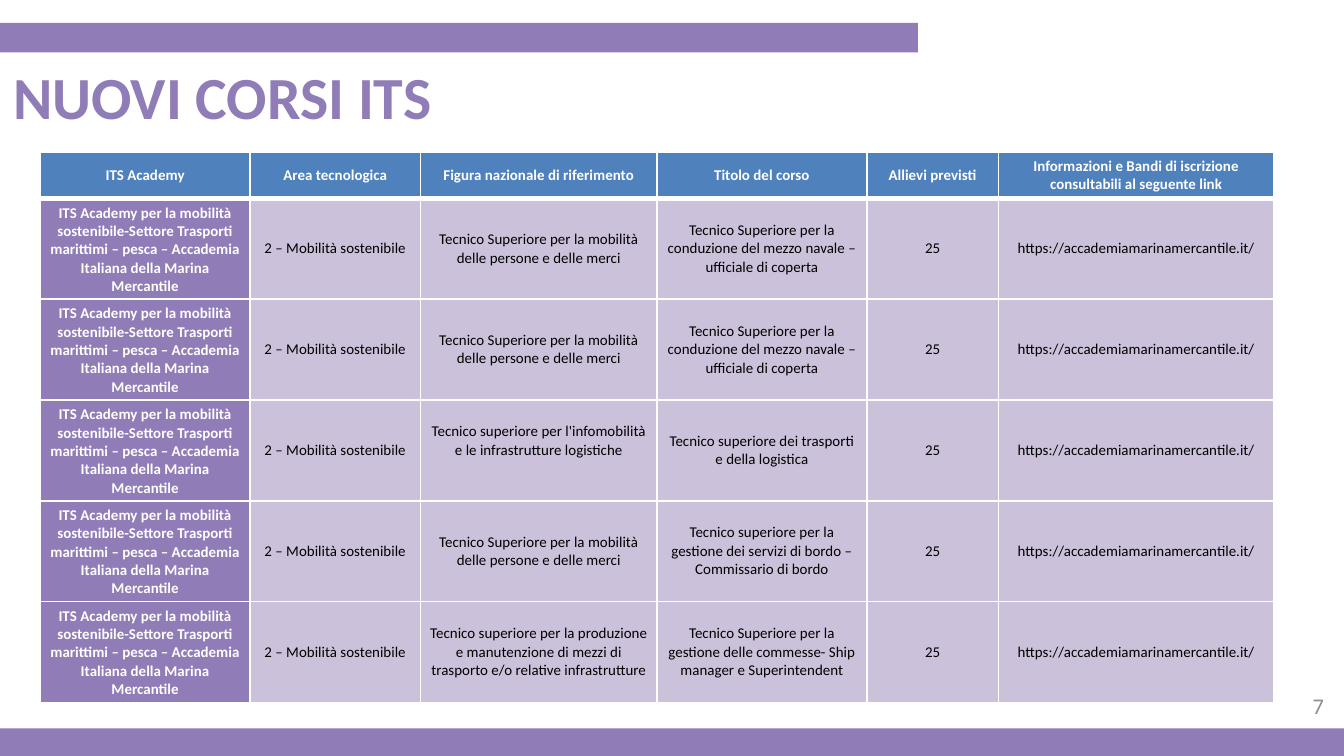
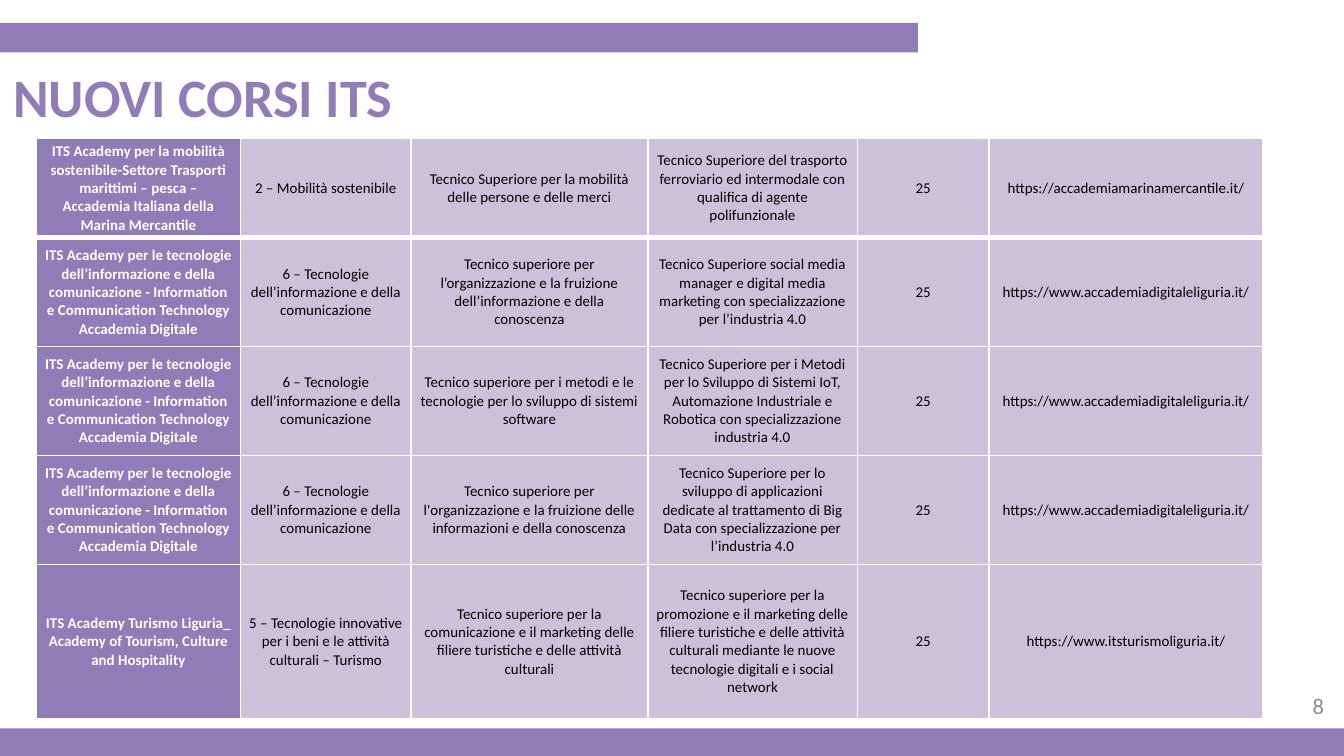
import dataclasses
import typing

import lxml.etree
import pptx
import pptx.dml.color
import pptx.enum.shapes
import pptx.enum.text
import pptx.oxml.ns
import pptx.util

ALIGN = pptx.enum.text.PP_ALIGN
MIDDLE = pptx.enum.text.MSO_ANCHOR.MIDDLE
MODULE = pptx.util.Inches(0.1)
SLIDE_COLS, SLIDE_ROWS = 100, 56.25


@dataclasses.dataclass(frozen=True)
class Theme:
    font: str = "Calibri"
    purple: str = "907CB7"
    lilac: str = "CCC1DA"
    blue: str = "4F81BD"
    white: str = "FFFFFF"
    black: str = "000000"
    grey: str = "8C8C8C"
    cell_size: float = 8
    number_size: float = 12
    rule: float = 1
    heavy_rule: float = 3


THEME = Theme()


class Box(typing.NamedTuple):
    col: float
    row: float
    cols: float
    rows: float


class Style(typing.NamedTuple):
    size: float
    color: str
    bold: bool = False
    align: ALIGN = ALIGN.LEFT


class Academy(typing.NamedTuple):
    name: str
    area: str
    link: str


@dataclasses.dataclass(frozen=True)
class Course:
    academy: Academy
    profile: str
    title: str
    seats: str = "25"
    profile_lift: float = 0

    def cells(self) -> list[str]:
        return [self.academy.name, self.academy.area, self.profile,
                self.title, self.seats, self.academy.link]


@dataclasses.dataclass(frozen=True)
class CoursePage:
    number: int
    title_size: float
    box: Box
    widths: list[float]
    heights: list[float]
    margin_x: float
    margin_y: float
    courses: list[Course]
    header: typing.Optional[list[str]] = None


BANDS = [Box(0, 1.7, 68.3, 2.2), Box(0, 54.2, SLIDE_COLS, 2.2)]
TITLE_BOX = Box(0, 4, 68.3, 6.3)
NUMBER_BOX = Box(93.9, 51, 5.6, 3)
TITLE = "NUOVI CORSI ITS"

HEADER = [
    "ITS Academy",
    "Area tecnologica",
    "Figura nazionale di riferimento",
    "Titolo del corso",
    "Allievi previsti",
    "Informazioni e Bandi di iscrizione consultabili al seguente link",
]

MARINE = Academy(
    "ITS Academy per la mobilità sostenibile-Settore Trasporti marittimi – pesca – "
    "Accademia Italiana della Marina Mercantile",
    "2 – Mobilità sostenibile",
    "https://accademiamarinamercantile.it/",
)
DIGITAL = Academy(
    "ITS Academy per le tecnologie dell’informazione e della comunicazione - "
    "Information e Communication Technology Accademia Digitale",
    "6 – Tecnologie dell’informazione e della comunicazione",
    "https://www.accademiadigitaleliguria.it/",
)
TOURISM = Academy(
    "ITS Academy Turismo Liguria_ Academy of Tourism, Culture and Hospitality",
    "5 – Tecnologie innovative per i beni e le attività culturali – Turismo",
    "https://www.itsturismoliguria.it/",
)

MOBILITY_PROFILE = "Tecnico Superiore per la mobilità delle persone e delle merci"
DECK_OFFICER = Course(
    MARINE, MOBILITY_PROFILE,
    "Tecnico Superiore per la conduzione del mezzo navale – ufficiale di coperta",
)

PAGES = [
    CoursePage(
        number=7, title_size=32, box=Box(3, 11.3, 91.9, 40.8),
        widths=[15.6, 12.7, 17.6, 15.6, 9.8, 20.5],
        heights=[3.4] + [7.5] * 5,
        margin_x=0.7, margin_y=0.4, header=HEADER,
        courses=[
            DECK_OFFICER,
            DECK_OFFICER,
            Course(
                MARINE,
                "Tecnico superiore per l'infomobilità e le infrastrutture logistiche",
                "Tecnico superiore dei trasporti e della logistica",
                profile_lift=1.4,
            ),
            Course(
                MARINE, MOBILITY_PROFILE,
                "Tecnico superiore per la gestione dei servizi di bordo – "
                "Commissario di bordo",
            ),
            Course(
                MARINE,
                "Tecnico superiore per la produzione e manutenzione di mezzi di "
                "trasporto e/o relative infrastrutture",
                "Tecnico Superiore per la gestione delle commesse- Ship manager e "
                "Superintendent",
            ),
        ],
    ),
    CoursePage(
        number=8, title_size=29, box=Box(2.7, 10.3, 91.2, 42.8),
        widths=[15.2, 12.7, 17.6, 15.6, 9.8, 20.4],
        heights=[7.4] + [8.1] * 3 + [11.5],
        margin_x=0.6, margin_y=0.3,
        courses=[
            Course(
                MARINE, MOBILITY_PROFILE,
                "Tecnico Superiore del trasporto ferroviario ed intermodale con "
                "qualifica di agente polifunzionale",
            ),
            Course(
                DIGITAL,
                "Tecnico superiore per l’organizzazione e la fruizione "
                "dell’informazione e della conoscenza",
                "Tecnico Superiore social media manager e digital media marketing con "
                "specializzazione per l’industria 4.0",
            ),
            Course(
                DIGITAL,
                "Tecnico superiore per i metodi e le tecnologie per lo sviluppo di "
                "sistemi software",
                "Tecnico Superiore per i Metodi per lo Sviluppo di Sistemi IoT, "
                "Automazione Industriale e Robotica con specializzazione industria 4.0",
            ),
            Course(
                DIGITAL,
                "Tecnico superiore per l'organizzazione e la fruizione delle "
                "informazioni e della conoscenza",
                "Tecnico Superiore per lo sviluppo di applicazioni dedicate al "
                "trattamento di Big Data con specializzazione per l’industria 4.0",
            ),
            Course(
                TOURISM,
                "Tecnico superiore per la comunicazione e il marketing delle filiere "
                "turistiche e delle attività culturali",
                "Tecnico superiore per la promozione e il marketing delle filiere "
                "turistiche e delle attività culturali mediante le nuove tecnologie "
                "digitali e i social network",
            ),
        ],
    ),
]


def grid(units: float) -> int:
    return round(units * MODULE)


def place(box: Box) -> list[int]:
    return [grid(units) for units in box]


def rgb(color: str) -> pptx.dml.color.RGBColor:
    return pptx.dml.color.RGBColor.from_string(color)


def write(tf, text: str, style: Style) -> None:
    tf.text = text
    tf.word_wrap = True
    p = tf.paragraphs[0]
    p.alignment = style.align
    for r in p.runs:
        r.font.name = THEME.font
        r.font.size = pptx.util.Pt(style.size)
        r.font.bold = style.bold
        r.font.color.rgb = rgb(style.color)


def add_band(s, box: Box) -> None:
    sp = s.shapes.add_shape(pptx.enum.shapes.MSO_SHAPE.RECTANGLE, *place(box))
    sp.shadow.inherit = False
    sp.fill.solid()
    sp.fill.fore_color.rgb = rgb(THEME.purple)
    sp.line.fill.background()


def add_text(s, box: Box, text: str, style: Style) -> None:
    tf = s.shapes.add_textbox(*place(box)).text_frame
    write(tf, text, style)
    tf.vertical_anchor = MIDDLE


def add_borders(cell, top: float, bottom: float) -> None:
    qn = pptx.oxml.ns.qn
    tc_pr = cell._tc.get_or_add_tcPr()
    sides = {"L": THEME.rule, "R": THEME.rule, "T": top, "B": bottom}
    for side, width in sides.items():
        ln = lxml.etree.SubElement(tc_pr, qn(f"a:ln{side}"), w=str(pptx.util.Pt(width)))
        fill = lxml.etree.SubElement(ln, qn("a:solidFill"))
        lxml.etree.SubElement(fill, qn("a:srgbClr"), val=THEME.white)


def add_course_table(s, page: CoursePage) -> None:
    rows = [course.cells() for course in page.courses]
    if page.header:
        rows.insert(0, page.header)
    offset = len(rows) - len(page.courses)
    table = s.shapes.add_table(len(rows), len(page.widths), *place(page.box)).table
    table.horz_banding = False
    for column, width in zip(table.columns, page.widths):
        column.width = grid(width)
    for row, height in zip(table.rows, page.heights):
        row.height = grid(height)

    for i, texts in enumerate(rows):
        is_header = i < offset
        top = THEME.heavy_rule if i == 1 else THEME.rule
        bottom = THEME.heavy_rule if i == 0 else THEME.rule
        for j, text in enumerate(texts):
            cell = table.cell(i, j)
            strong = is_header or j == 0
            color = THEME.white if strong else THEME.black
            write(cell.text_frame, text,
                  Style(THEME.cell_size, color, strong, ALIGN.CENTER))
            cell.vertical_anchor = MIDDLE
            cell.margin_left = cell.margin_right = grid(page.margin_x)
            cell.margin_top = cell.margin_bottom = grid(page.margin_y)
            add_borders(cell, top, bottom)
            cell.fill.solid()
            background = THEME.purple if strong else THEME.lilac
            cell.fill.fore_color.rgb = rgb(THEME.blue if is_header else background)

    profile_col = HEADER.index("Figura nazionale di riferimento")
    for i, course in enumerate(page.courses, offset):
        table.cell(i, profile_col).margin_bottom = grid(page.margin_y + course.profile_lift)


def add_page(prs, page: CoursePage) -> None:
    s = prs.slides.add_slide(prs.slide_layouts[6])
    for band in BANDS:
        add_band(s, band)
    add_text(s, TITLE_BOX, TITLE, Style(page.title_size, THEME.purple, True))
    add_course_table(s, page)
    add_text(s, NUMBER_BOX, str(page.number),
             Style(THEME.number_size, THEME.grey, align=ALIGN.RIGHT))


def main() -> None:
    prs = pptx.Presentation()
    prs.slide_width, prs.slide_height = grid(SLIDE_COLS), grid(SLIDE_ROWS)
    for page in PAGES:
        add_page(prs, page)
    prs.save("out.pptx")


if __name__ == "__main__":
    main()
